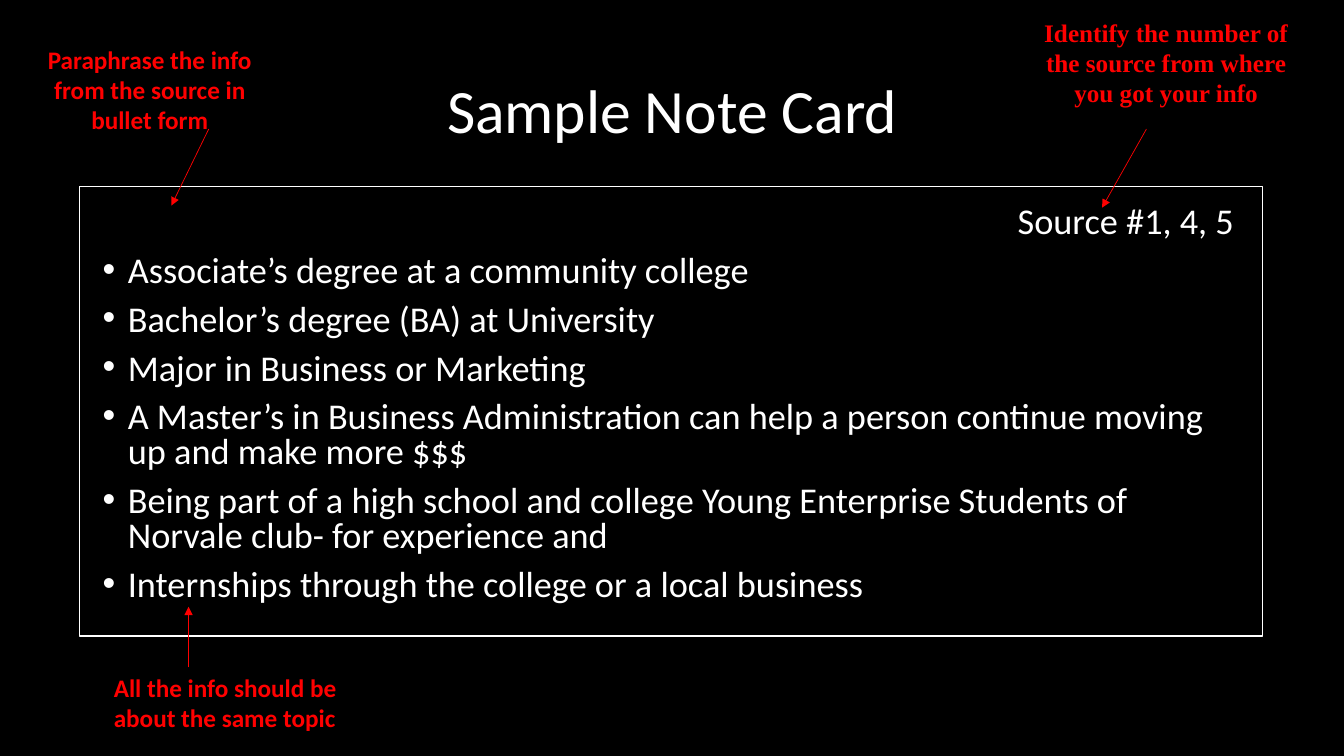
from lxml import etree
from pptx import Presentation
from pptx.dml.color import RGBColor
from pptx.enum.shapes import MSO_CONNECTOR, MSO_SHAPE
from pptx.enum.text import MSO_ANCHOR, PP_ALIGN
from pptx.oxml.ns import qn
from pptx.util import Inches, Pt

LEFT, CENTER, RIGHT = PP_ALIGN.LEFT, PP_ALIGN.CENTER, PP_ALIGN.RIGHT
MIDDLE = MSO_ANCHOR.MIDDLE
RECT = MSO_SHAPE.RECTANGLE
STRAIGHT = MSO_CONNECTOR.STRAIGHT

WIDE, HIGH = Inches(13.33), Inches(7.5)
COLORS = {"back": "000000", "text": "FFFFFF", "note": "FF0000"}
SANS, SERIF = "Calibri", "Times New Roman"

FACTS = [
    "Associate’s degree at a community college",
    "Bachelor’s degree (BA) at University",
    "Major in Business or Marketing",
    "A Master’s in Business Administration can help a person "
    "continue moving up and make more $$$",
    "Being part of a high school and college Young Enterprise "
    "Students of Norvale club- for experience and",
    "Internships through the college or a local business",
]

# Text, box, font, alignment, arrow start and end
NOTES = [
    ("Identify the number of the source from where you got your info",
     (76.6, 1.6, 20.33, 25.6), SERIF, CENTER, (85.3, 17.07), (82, 27.47)),
    ("Paraphrase the info from the source in bullet form",
     (1.73, 5.2, 18.83, 13.47), SANS, CENTER, (15.53, 17.07), (12.75, 27.2)),
    ("All the info should be about the same topic",
     (7.73, 88.27, 19.58, 9.47), SANS, LEFT, (14.03, 88.27), (14.03, 80.27)),
]


def color(name):
    return RGBColor.from_string(COLORS[name])


def place(*shares):
    """Turn percents of slide width and height, in turn, into lengths."""
    sides = (WIDE, HIGH) * (len(shares) // 2)
    return [int(side * share / 100) for side, share in zip(sides, shares)]


def add_run(para, text, size, tint="text", face=SANS, bold=False):
    run = para.add_run()
    run.text = text
    font = run.font
    font.size, font.name, font.bold = Pt(size), face, bold
    font.color.rgb = color(tint)


def add_box(slide, box):
    frame = slide.shapes.add_textbox(*place(*box)).text_frame
    frame.word_wrap = True
    return frame


def add_title(slide, text):
    title = slide.shapes.title
    title.left, title.top, title.width, title.height = place(
        6.9, 5.33, 86.27, 19.33)
    title.text_frame.vertical_anchor = MIDDLE
    para = title.text_frame.paragraphs[0]
    para.alignment, para.line_spacing = CENTER, 0.9
    add_run(para, text, 44)


def add_bullet(para):
    props = para._p.get_or_add_pPr()
    props.set("marL", str(Inches(0.25)))
    props.set("indent", str(-Inches(0.25)))
    etree.SubElement(props, qn("a:buFont"), typeface="Arial")
    etree.SubElement(props, qn("a:buChar"), char="•")


def add_facts(slide, source, facts):
    frame = add_box(slide, (6.9, 26.67, 86.27, 63.47))
    for row, text in enumerate([source, *facts]):
        para = frame.add_paragraph() if row else frame.paragraphs[0]
        para.alignment = LEFT if row else RIGHT
        para.line_spacing, para.space_before = 0.8, Pt(10)
        if row:
            add_bullet(para)
        add_run(para, text, 25.9)


def add_card(slide):
    card = slide.shapes.add_shape(RECT, *place(5.93, 24.67, 88, 59.47))
    card.shadow.inherit = False
    card.fill.background()
    card.line.color.rgb = color("text")
    card.line.width = Pt(1)


def add_arrow(slide, start, end):
    arrow = slide.shapes.add_connector(STRAIGHT, *place(*start, *end))
    arrow.line.color.rgb = color("note")
    arrow.line.width = Pt(0.5)
    etree.SubElement(arrow.line._get_or_add_ln(), qn("a:tailEnd"),
                     type="triangle")
    etree.SubElement(arrow._element.spPr, qn("a:effectLst"))


def add_note(slide, text, box, face, align, start, end):
    para = add_box(slide, box).paragraphs[0]
    para.alignment = align
    add_run(para, text, 18, "note", face, True)
    add_arrow(slide, start, end)


def main():
    deck = Presentation()
    deck.slide_width, deck.slide_height = WIDE, HIGH
    slide = deck.slides.add_slide(deck.slide_layouts[5])
    fill = slide.background.fill
    fill.solid()
    fill.fore_color.rgb = color("back")
    add_title(slide, "Sample Note Card")
    add_facts(slide, "Source #1, 4, 5 ", FACTS)
    add_card(slide)
    for note in NOTES:
        add_note(slide, *note)
    deck.save("out.pptx")


if __name__ == "__main__":
    main()
